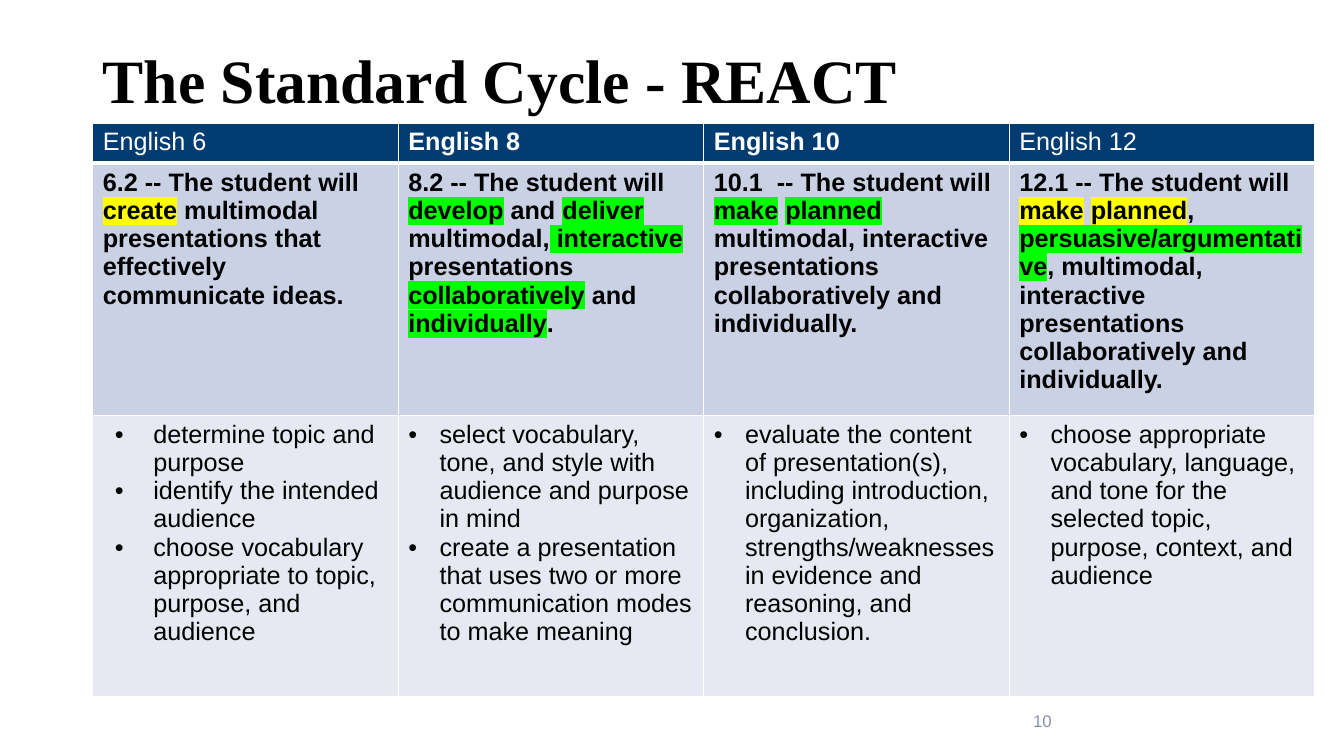
from dataclasses import dataclass

from lxml.etree import SubElement
from pptx import Presentation
from pptx.dml.color import RGBColor
from pptx.enum.text import MSO_ANCHOR, MSO_AUTO_SIZE, PP_ALIGN
from pptx.oxml.ns import qn
from pptx.util import Inches, Pt

COLORS = {
    "black": "000000", "white": "FFFFFF", "navy": "003C71", "blue": "CAD1E4",
    "pale": "E6E9F2", "gray": "888FA3", "yellow": "FFFF00", "green": "00FF00",
}
COL_WIDTH = 3.03
ROW_HEIGHTS = (0.39, 2.42, 2.79)
ROW_FILLS = ("navy", "blue", "pale")


@dataclass
class Part:
    text: str
    mark: str = ""


@dataclass
class Grade:
    name: str
    bold: bool
    standard: list[Part]
    skills: list[str]
    margin: float = 0.31
    hang: float = 0.31


GRADES = [
    Grade("English 6", False, [
        Part("6.2 -- The student will "), Part("create", "yellow"),
        Part(" multimodal presentations that effectively communicate ideas."),
    ], [
        "determine topic and purpose",
        "identify the intended audience",
        "choose vocabulary appropriate to topic, purpose, and audience",
    ], 0.5, 0.38),
    Grade("English 8", True, [
        Part("8.2 -- The student will "), Part("develop", "green"),
        Part(" and "), Part("deliver ", "green"), Part("multimodal,"),
        Part(" interactive", "green"), Part(" presentations "),
        Part("collaboratively", "green"), Part(" and "),
        Part("individually", "green"), Part("."),
    ], [
        "select vocabulary, tone, and style with audience and purpose in mind",
        "create a presentation that uses two or more communication modes "
        "to make meaning",
    ]),
    Grade("English 10", True, [
        Part("10.1  -- The student will "), Part("make", "green"), Part(" "),
        Part("planned ", "green"),
        Part("multimodal, interactive presentations collaboratively "
             "and individually."),
    ], [
        "evaluate the content of presentation(s), including introduction, "
        "organization, strengths/weaknesses in evidence and reasoning, "
        "and conclusion.",
    ]),
    Grade("English 12", False, [
        Part("12.1 -- The student will "), Part("make", "yellow"), Part(" "),
        Part("planned", "yellow"), Part(", "),
        Part("persuasive/argumentative", "green"),
        Part(", multimodal, interactive presentations collaboratively "
             "and individually."),
    ], [
        "choose appropriate vocabulary, language, and tone for the selected "
        "topic, purpose, context, and audience",
    ]),
]


def add_run(para, part: Part, color: str = "black", **style) -> None:
    run = para.add_run()
    run.text = part.text
    values = {"name": "Arial", "size": Pt(18), "bold": False} | style
    for key, value in values.items():
        setattr(run.font, key, value)
    run.font.color.rgb = RGBColor.from_string(COLORS[color])
    if part.mark:
        props = run.font._element
        mark = SubElement(props, qn("a:highlight"))
        SubElement(mark, qn("a:srgbClr"), val=COLORS[part.mark])
        props.find(qn("a:solidFill")).addnext(mark)


def add_bullet(para, margin: float, hang: float) -> None:
    props = para._p.get_or_add_pPr()
    props.set("marL", str(Inches(margin)))
    props.set("indent", str(-Inches(hang)))
    color = SubElement(props, qn("a:buClr"))
    SubElement(color, qn("a:srgbClr"), val=COLORS["black"])
    SubElement(props, qn("a:buFont"), typeface="Arial")
    SubElement(props, qn("a:buChar"), char="•")


def style_cell(cell, row: int) -> None:
    """Draw white borders, thick between the header and the body."""
    thick = {0: "B", 1: "T"}.get(row)
    props = cell._tc.get_or_add_tcPr()
    for side in "LRTB":
        width = Pt(3 if side == thick else 1)
        line = SubElement(props, qn(f"a:ln{side}"), w=str(width))
        fill = SubElement(line, qn("a:solidFill"))
        SubElement(fill, qn("a:srgbClr"), val=COLORS["white"])
    cell.fill.solid()
    cell.fill.fore_color.rgb = RGBColor.from_string(COLORS[ROW_FILLS[row]])


def fill_grade(table, col: int, grade: Grade) -> None:
    cells = [table.cell(row, col) for row in range(len(ROW_HEIGHTS))]
    for row, cell in enumerate(cells):
        style_cell(cell, row)
    head, body, list_cell = (cell.text_frame for cell in cells)
    add_run(head.paragraphs[0], Part(grade.name), "white", bold=grade.bold)
    for part in grade.standard:
        add_run(body.paragraphs[0], part, bold=True)
    for i, skill in enumerate(grade.skills):
        para = list_cell.add_paragraph() if i else list_cell.paragraphs[0]
        add_bullet(para, grade.margin, grade.hang)
        add_run(para, Part(skill))


def add_grades(slide) -> None:
    frame = slide.shapes.add_table(
        len(ROW_HEIGHTS), len(GRADES), Inches(0.92), Inches(1.22),
        Inches(COL_WIDTH * len(GRADES)), Inches(sum(ROW_HEIGHTS)))
    table = frame.table
    for row, height in zip(table.rows, ROW_HEIGHTS):
        row.height = Inches(height)
    for col, grade in enumerate(GRADES):
        table.columns[col].width = Inches(COL_WIDTH)
        fill_grade(table, col, grade)


def set_title(slide) -> None:
    title = slide.shapes.title
    box = {"left": 0.92, "top": 0.1, "width": 11.5, "height": 1.45}
    for key, value in box.items():
        setattr(title, key, Inches(value))
    frame = title.text_frame
    frame.auto_size = MSO_AUTO_SIZE.NONE
    frame.vertical_anchor = MSO_ANCHOR.MIDDLE
    para = frame.paragraphs[0]
    para.alignment = PP_ALIGN.LEFT
    para.line_spacing = 0.9
    add_run(para, Part("The Standard Cycle - REACT"),
            name="Times New Roman", size=Pt(44), bold=True)


def add_number(slide) -> None:
    box = slide.shapes.add_textbox(
        Inches(9.42), Inches(6.95), Inches(1.11), Inches(0.4))
    frame = box.text_frame
    frame.word_wrap = True
    frame.vertical_anchor = MSO_ANCHOR.MIDDLE
    frame.paragraphs[0].alignment = PP_ALIGN.RIGHT
    add_run(frame.paragraphs[0], Part("10"), "gray", size=Pt(12))


def main() -> None:
    deck = Presentation()
    deck.slide_width = Inches(13.33)
    deck.slide_height = Inches(7.5)
    slide = deck.slides.add_slide(deck.slide_layouts[5])
    set_title(slide)
    add_number(slide)
    add_grades(slide)
    deck.save("out.pptx")


if __name__ == "__main__":
    main()
